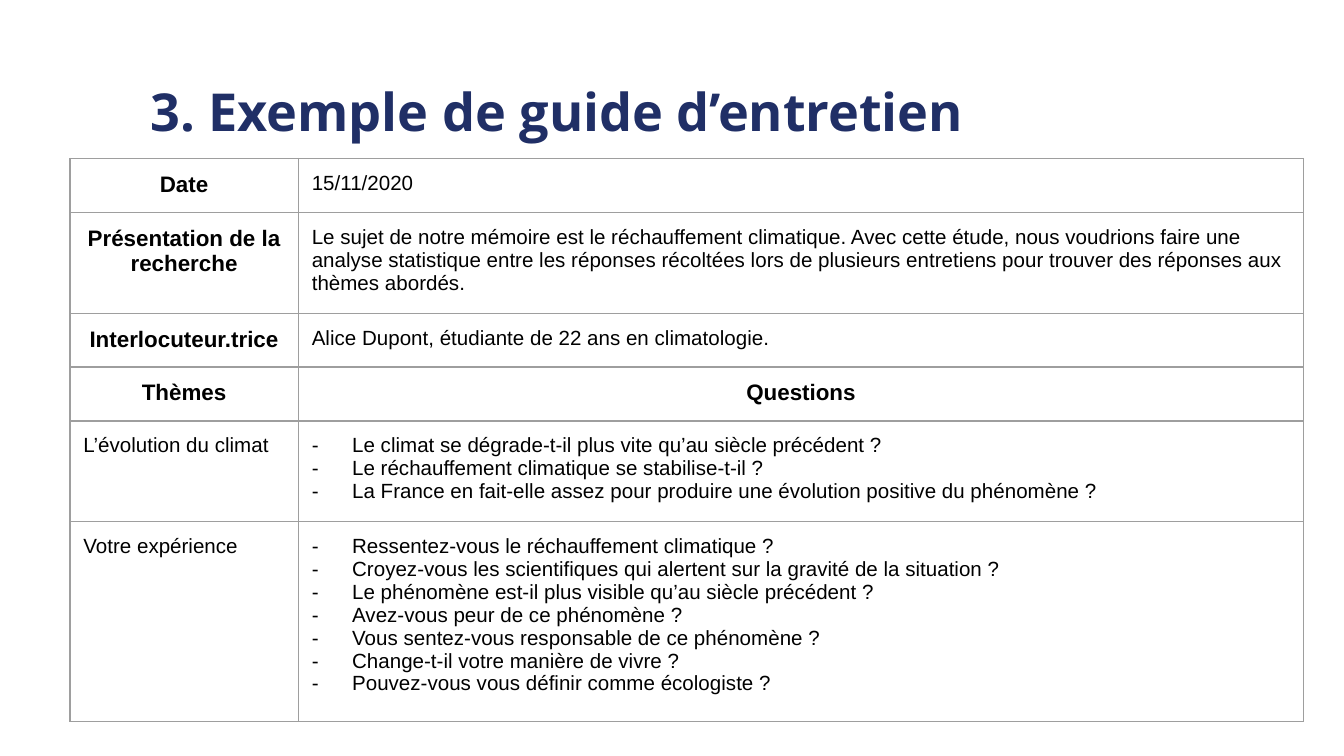
from dataclasses import dataclass

from lxml.etree import SubElement
from pptx import Presentation
from pptx.dml.color import RGBColor
from pptx.enum.text import MSO_ANCHOR, PP_ALIGN
from pptx.oxml.ns import qn
from pptx.util import Inches, Pt


@dataclass(frozen=True)
class Theme:
    title_color: str = "202F66"
    text_color: str = "000000"
    border_color: str = "9E9E9E"
    title_font: str = "Open Sans"
    body_font: str = "Arial"
    title_size: float = 28
    heading_size: float = 12
    body_size: float = 11
    border_width: float = 0.75
    inset: float = 0.1
    list_margin: float = 0.3
    list_indent: float = -0.33


class GuidePage:
    def __init__(self, deck, theme):
        self.deck = deck
        self.theme = theme
        self.page = deck.slides.add_slide(deck.slide_layouts[6])

    def across(self, share):
        return round(self.deck.slide_width * share)

    def down(self, share):
        return round(self.deck.slide_height * share)

    def style(self, para, font, size, color, bold=False):
        para.font.name = font
        para.font.size = Pt(size)
        para.font.bold = bold
        para.font.color.rgb = RGBColor.from_string(color)

    def pad(self, target):
        inset = Inches(self.theme.inset)
        target.margin_left = target.margin_right = inset
        target.margin_top = target.margin_bottom = inset

    def title(self, text, left, top, width, height):
        box = self.page.shapes.add_textbox(
            self.across(left), self.down(top), self.across(width), self.down(height)
        )
        frame = box.text_frame
        frame.word_wrap = True
        frame.vertical_anchor = MSO_ANCHOR.MIDDLE
        self.pad(frame)
        para = frame.paragraphs[0]
        para.text = text
        theme = self.theme
        self.style(para, theme.title_font, theme.title_size, theme.title_color, True)

    def table(self, rows, left, top, widths, heights):
        frame = self.page.shapes.add_table(
            len(rows), len(widths), self.across(left), self.down(top),
            self.across(sum(widths)), self.down(sum(heights)),
        )
        table = frame.table
        table.first_row = table.horz_banding = False
        for column, width in zip(table.columns, widths):
            column.width = self.across(width)
        for row, height, contents in zip(table.rows, heights, rows):
            row.height = self.down(height)
            for cell, (kind, content) in zip(row.cells, contents):
                self.cell(cell, kind, content)

    def cell(self, cell, kind, content):
        self.pad(cell)
        self.borders(cell)
        cell.fill.background()
        cell.text = content
        theme = self.theme
        heading = kind == "heading"
        size = theme.heading_size if heading else theme.body_size
        for para in cell.text_frame.paragraphs:
            if heading:
                para.alignment = PP_ALIGN.CENTER
            if kind == "list":
                self.dash(para)
            self.style(para, theme.body_font, size, theme.text_color, heading)

    def borders(self, cell):
        properties = cell._tc.get_or_add_tcPr()
        for side in ("lnL", "lnR", "lnT", "lnB"):
            line = SubElement(properties, qn(f"a:{side}"), w=str(Pt(self.theme.border_width)))
            fill = SubElement(line, qn("a:solidFill"))
            SubElement(fill, qn("a:srgbClr"), val=self.theme.border_color)

    def dash(self, para):
        properties = para._p.get_or_add_pPr()
        properties.set("marL", str(Inches(self.theme.list_margin)))
        properties.set("indent", str(Inches(self.theme.list_indent)))
        color = SubElement(properties, qn("a:buClr"))
        SubElement(color, qn("a:srgbClr"), val=self.theme.text_color)
        SubElement(properties, qn("a:buFont"), typeface=self.theme.body_font)
        SubElement(properties, qn("a:buChar"), char="-")


CLIMATE_QUESTIONS = [
    "Le climat se dégrade-t-il plus vite qu’au siècle précédent ?",
    "Le réchauffement climatique se stabilise-t-il ?",
    "La France en fait-elle assez pour produire une évolution positive du phénomène ?",
]

EXPERIENCE_QUESTIONS = [
    "Ressentez-vous le réchauffement climatique ?",
    "Croyez-vous les scientifiques qui alertent sur la gravité de la situation ?",
    "Le phénomène est-il plus visible qu’au siècle précédent ?",
    "Avez-vous peur de ce phénomène ?",
    "Vous sentez-vous responsable de ce phénomène ?",
    "Change-t-il votre manière de vivre ?",
    "Pouvez-vous vous définir comme écologiste ?",
]

SUBJECT = (
    "Le sujet de notre mémoire est le réchauffement climatique. "
    "Avec cette étude, nous voudrions faire une analyse statistique entre les réponses "
    "récoltées lors de plusieurs entretiens pour trouver des réponses aux thèmes abordés."
)

INTERVIEW_ROWS = [
    [("heading", "Date"), ("body", "15/11/2020")],
    [("heading", "Présentation de la recherche"), ("body", SUBJECT)],
    [
        ("heading", "Interlocuteur.trice"),
        ("body", "Alice Dupont, étudiante de 22 ans en climatologie."),
    ],
    [("heading", "Thèmes"), ("heading", "Questions")],
    [("body", "L’évolution du climat"), ("list", "\n".join(CLIMATE_QUESTIONS))],
    [("body", "Votre expérience"), ("list", "\n".join(EXPERIENCE_QUESTIONS))],
]

PAGE_WIDTH = 10
PAGE_HEIGHT = PAGE_WIDTH * 9 / 16


def main():
    deck = Presentation()
    deck.slide_width = Inches(PAGE_WIDTH)
    deck.slide_height = Inches(PAGE_HEIGHT)
    guide = GuidePage(deck, Theme())
    guide.title(
        "3. Exemple de guide d’entretien",
        left=1.02 / PAGE_WIDTH,
        top=0.51 / PAGE_HEIGHT,
        width=7.87 / PAGE_WIDTH,
        height=0.63 / PAGE_HEIGHT,
    )
    single, triple, seven_lines = (inches / PAGE_HEIGHT for inches in (0.39, 0.71, 1.39))
    guide.table(
        INTERVIEW_ROWS,
        left=0.52 / PAGE_WIDTH,
        top=1.18 / PAGE_HEIGHT,
        widths=[1.7 / PAGE_WIDTH, 7.48 / PAGE_WIDTH],
        heights=[single, triple, single, single, triple, seven_lines],
    )
    deck.save("out.pptx")


if __name__ == "__main__":
    main()
